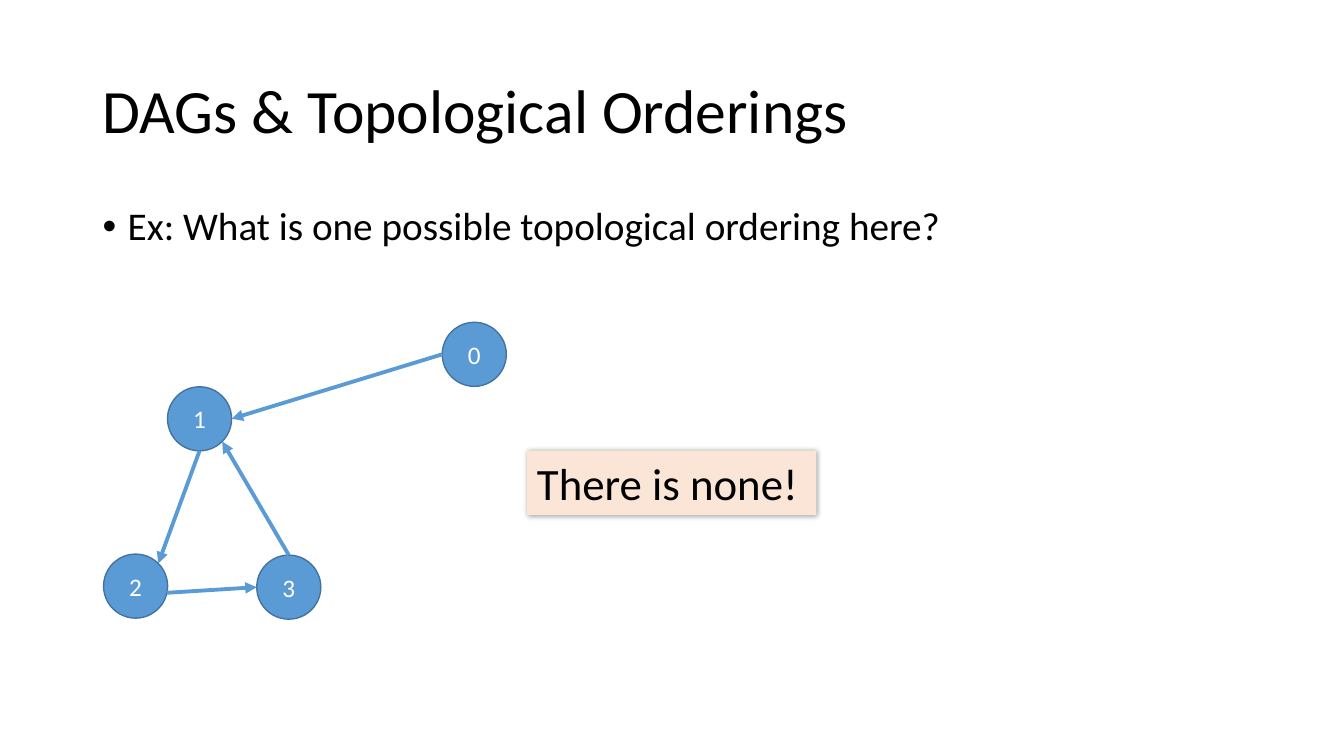
"""Build a slide asking for a topological ordering of a graph that has a cycle."""
from dataclasses import dataclass
from math import cos, radians, sin

from lxml.etree import SubElement
from pptx import Presentation
from pptx.dml.color import RGBColor
from pptx.enum.shapes import MSO_CONNECTOR, MSO_SHAPE
from pptx.enum.text import MSO_ANCHOR, MSO_AUTO_SIZE, PP_ALIGN
from pptx.oxml.ns import qn
from pptx.util import Inches, Pt

TITLE = "DAGs & Topological Orderings"
QUESTION = "Ex: What is one possible topological ordering here?"
ANSWER = "There is none! "

# Areas are left, top, width, height; centres are x, y: percent of the slide.
AREAS = {
    "title": (6.88, 5.33, 86.25, 19.33),
    "question": (6.88, 26.67, 86.25, 63.47),
    "answer": (39.22, 59.6, 21.53, 8.53),
}
NODES = {
    "0": (35.29, 46.87),
    "1": (14.85, 55.4),
    "2": (10.09, 77.53),
    "3": (21.49, 77.67),
}
DIAMETER = 8.47
RIGHT, LOW_RIGHT, BOTTOM, LEFT, TOP, HIGH_RIGHT = 0, 45, 90, 180, 270, 315
EDGES = [
    ("0", LEFT, "1", RIGHT),
    ("1", BOTTOM, "2", HIGH_RIGHT),
    ("2", 12, "3", LEFT),
    ("3", TOP, "1", LOW_RIGHT),
]


@dataclass(frozen=True)
class Theme:
    font: str = "Calibri"
    ink: str = "000000"
    node: str = "5B9BD5"
    outline: str = "43739E"
    label: str = "FFFFFF"
    answer: str = "FBE5D6"
    title_size: float = 44
    question_size: float = 28
    answer_size: float = 32
    label_size: float = 18
    outline_width: float = 1
    edge_width: float = 2.75


THEME = Theme()
deck = Presentation()
deck.slide_width, deck.slide_height = Inches(13.33), Inches(7.5)
slide = deck.slides.add_slide(deck.slide_layouts[1])


def across(percent):
    return round(deck.slide_width * percent / 100)


def down(percent):
    return round(deck.slide_height * percent / 100)


def box(area):
    left, top, width, height = area
    return across(left), down(top), across(width), down(height)


def assign(target, values):
    for name, value in values.items():
        setattr(target, name, value)


def write(shape, text, size, color, frame_format, paragraph_format):
    frame = shape.text_frame
    frame.text = text
    assign(frame, {"word_wrap": True, **frame_format})
    paragraph = frame.paragraphs[0]
    assign(paragraph, paragraph_format)
    font = paragraph.runs[0].font
    assign(font, {"name": THEME.font, "size": Pt(size)})
    font.color.rgb = RGBColor.from_string(color)
    return paragraph


def place(shape, area):
    assign(shape, dict(zip(("left", "top", "width", "height"), box(area))))


def fill(shape, color):
    shape.fill.solid()
    shape.fill.fore_color.rgb = RGBColor.from_string(color)


def stroke(shape, color, width):
    shape.line.color.rgb = RGBColor.from_string(color)
    shape.line.width = Pt(width)


def rim(node, angle):
    x, y = NODES[node]
    radius = down(DIAMETER) / 2
    turn = radians(angle)
    return round(across(x) + radius * cos(turn)), round(down(y) + radius * sin(turn))


def add_node(label, centre):
    size = down(DIAMETER)
    x, y = across(centre[0]), down(centre[1])
    node = slide.shapes.add_shape(MSO_SHAPE.OVAL, x - size // 2, y - size // 2, size, size)
    node.shadow.inherit = False
    fill(node, THEME.node)
    stroke(node, THEME.outline, THEME.outline_width)
    write(node, label, THEME.label_size, THEME.label,
          {"vertical_anchor": MSO_ANCHOR.MIDDLE}, {"alignment": PP_ALIGN.CENTER})


def add_edge(source, leaving, target, arriving):
    edge = slide.shapes.add_connector(
        MSO_CONNECTOR.STRAIGHT, *rim(source, leaving), *rim(target, arriving))
    stroke(edge, THEME.node, THEME.edge_width)
    SubElement(edge.line._get_or_add_ln(), qn("a:tailEnd"), type="triangle")
    SubElement(edge._element.spPr, qn("a:effectLst"))


def add_answer():
    answer = slide.shapes.add_shape(MSO_SHAPE.RECTANGLE, *box(AREAS["answer"]))
    fill(answer, THEME.answer)
    answer.line.fill.background()
    answer.shadow.inherit = False
    effects = answer._element.spPr.find(qn("a:effectLst"))
    shadow = SubElement(effects, qn("a:outerShdw"), blurRad=str(Pt(4)), dist=str(Pt(1)),
                        dir=str(45 * 60000), algn="tl", rotWithShape="0")
    tint = SubElement(shadow, qn("a:srgbClr"), val=THEME.ink)
    SubElement(tint, qn("a:alpha"), val="40000")
    write(answer, ANSWER, THEME.answer_size, THEME.ink,
          {"vertical_anchor": MSO_ANCHOR.TOP, "auto_size": MSO_AUTO_SIZE.SHAPE_TO_FIT_TEXT},
          {"alignment": PP_ALIGN.LEFT})


def main():
    title, question = slide.shapes.title, slide.placeholders[1]
    place(title, AREAS["title"])
    write(title, TITLE, THEME.title_size, THEME.ink, {"vertical_anchor": MSO_ANCHOR.MIDDLE},
          {"alignment": PP_ALIGN.LEFT, "line_spacing": 0.9})
    place(question, AREAS["question"])
    bullet = write(question, QUESTION, THEME.question_size, THEME.ink,
                   {"vertical_anchor": MSO_ANCHOR.TOP},
                   {"line_spacing": 0.9, "space_before": Pt(10)})
    indent = Inches(0.25)
    settings = bullet._p.get_or_add_pPr()
    settings.set("marL", str(indent))
    settings.set("indent", str(-indent))
    SubElement(settings, qn("a:buFont"), typeface="Arial")
    SubElement(settings, qn("a:buChar"), char="•")
    for label, centre in NODES.items():
        add_node(label, centre)
    for edge in EDGES:
        add_edge(*edge)
    add_answer()
    deck.save("out.pptx")


if __name__ == "__main__":
    main()
